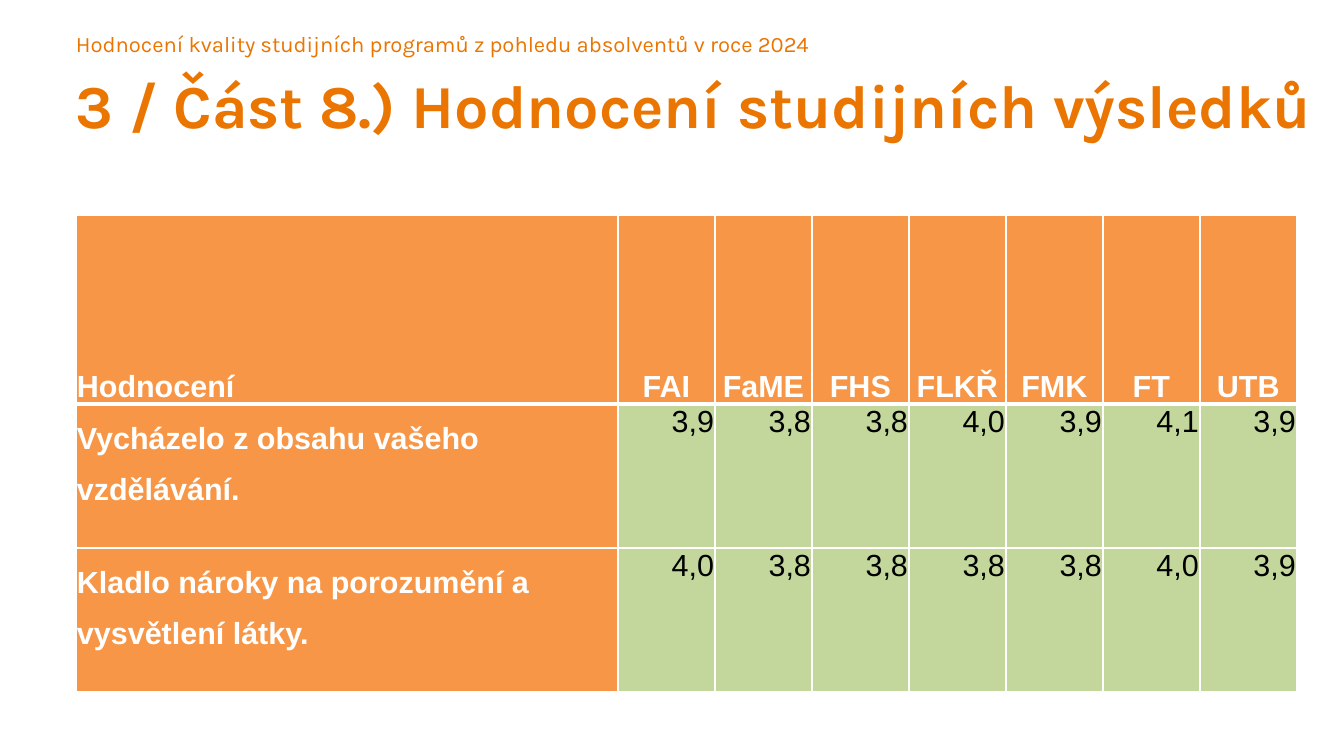
from lxml import etree
from pptx import Presentation
from pptx.dml.color import RGBColor
from pptx.enum.text import MSO_ANCHOR, PP_ALIGN
from pptx.oxml.ns import qn
from pptx.util import Emu, Pt

LEFT, CENTER, RIGHT = PP_ALIGN.LEFT, PP_ALIGN.CENTER, PP_ALIGN.RIGHT
TOP, BOTTOM = MSO_ANCHOR.TOP, MSO_ANCHOR.BOTTOM

HEADING_ORANGE = RGBColor(0xEA, 0x75, 0x00)
CELL_ORANGE = RGBColor(0xF7, 0x96, 0x46)
CELL_GREEN = RGBColor(0xC3, 0xD6, 0x9B)
WHITE = RGBColor(0xFF, 0xFF, 0xFF)
BLACK = RGBColor(0x00, 0x00, 0x00)

LABEL_WIDTH, SCORE_WIDTH = 542, 97
HEADER_HEIGHT, BODY_HEIGHT = 189, 144

RATINGS = [
    ["Hodnocení", "FAI", "FaME", "FHS", "FLKŘ", "FMK", "FT", "UTB"],
    ["Vycházelo z obsahu vašeho vzdělávání.",
     "3,9", "3,8", "3,8", "4,0", "3,9", "4,1", "3,9"],
    ["Kladlo nároky na porozumění a vysvětlení látky.",
     "4,0", "3,8", "3,8", "3,8", "3,8", "4,0", "3,9"],
]


def px(length):
    """Turn pixels into EMU."""
    return Emu(round(length * 914400 / 122))


def style_font(font, name, size, color, bold):
    """Set the face, size, colour and weight of a font."""
    font.name, font.size, font.bold = name, Pt(size), bold
    font.color.rgb = color


def add_heading(slide, box, text, size, bold):
    """Place one orange heading line in a box."""
    frame = slide.shapes.add_textbox(*map(px, box)).text_frame
    frame.word_wrap = True
    frame.margin_left = frame.margin_right = frame.margin_top = frame.margin_bottom = 0
    paragraph = frame.paragraphs[0]
    paragraph.text = text
    style_font(paragraph.font, "Karla", size, HEADING_ORANGE, bold)


def add_borders(cell, widths):
    """Draw white cell borders from widths in points keyed by side."""
    properties = cell._tc.get_or_add_tcPr()
    for side, width in widths.items():
        line = etree.SubElement(properties, qn(f"a:ln{side}"), w=str(Pt(width)))
        fill = etree.SubElement(line, qn("a:solidFill"))
        etree.SubElement(fill, qn("a:srgbClr"), val=str(WHITE))


def fill_cell(cell, text, row, column):
    """Write and style a cell according to its row and column."""
    is_header, is_label = row == 0, column == 0
    is_heading = is_header or is_label
    add_borders(cell, {"L": 1, "R": 1, "T": 3 if row == 1 else 1,
                       "B": 3 if is_header else 1})
    cell.fill.solid()
    cell.fill.fore_color.rgb = CELL_ORANGE if is_heading else CELL_GREEN
    cell.vertical_anchor = BOTTOM if is_header else TOP
    is_faculty = is_header and not is_label
    cell.margin_left = cell.margin_right = px(6 if is_faculty else 1)
    cell.margin_top = px(0 if is_faculty else 1)
    cell.margin_bottom = 0
    paragraph = cell.text_frame.paragraphs[0]
    paragraph.text = text
    paragraph.alignment = LEFT if is_label else CENTER if is_header else RIGHT
    if is_heading:
        paragraph.line_spacing = 1.5
    style_font(paragraph.font, "Arial", 18, WHITE if is_heading else BLACK, is_heading)


def add_ratings_table(slide, left, top):
    """Place the table of ratings by faculty."""
    widths = [LABEL_WIDTH] + [SCORE_WIDTH] * (len(RATINGS[0]) - 1)
    heights = [HEADER_HEIGHT] + [BODY_HEIGHT] * (len(RATINGS) - 1)
    table = slide.shapes.add_table(
        len(heights), len(widths), px(left), px(top),
        px(sum(widths)), px(sum(heights))).table
    for column, width in zip(table.columns, widths):
        column.width = px(width)
    for row, height in zip(table.rows, heights):
        row.height = px(height)
    for row, texts in enumerate(RATINGS):
        for column, text in enumerate(texts):
            fill_cell(table.cell(row, column), text, row, column)


def main():
    """Build and save the presentation."""
    presentation = Presentation()
    presentation.slide_width, presentation.slide_height = px(1344), px(756)
    slide = presentation.slides.add_slide(presentation.slide_layouts[6])
    add_heading(slide, (76, 31, 1210, 27),
                "Hodnocení kvality studijních programů z pohledu absolventů v roce 2024",
                13, False)
    add_heading(slide, (76, 67, 1242, 148),
                "3 / Část 8.) Hodnocení studijních výsledků", 36, True)
    add_ratings_table(slide, 76, 215)
    presentation.save("out.pptx")


if __name__ == "__main__":
    main()
